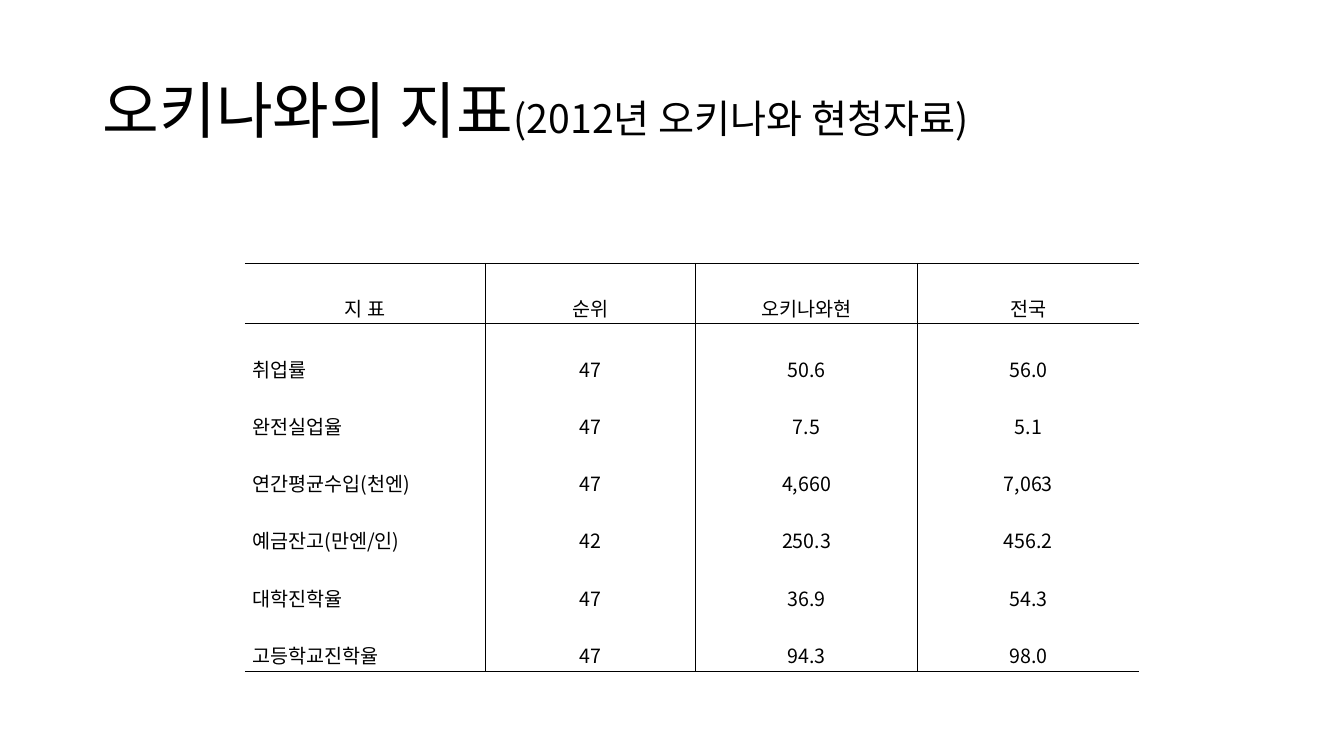
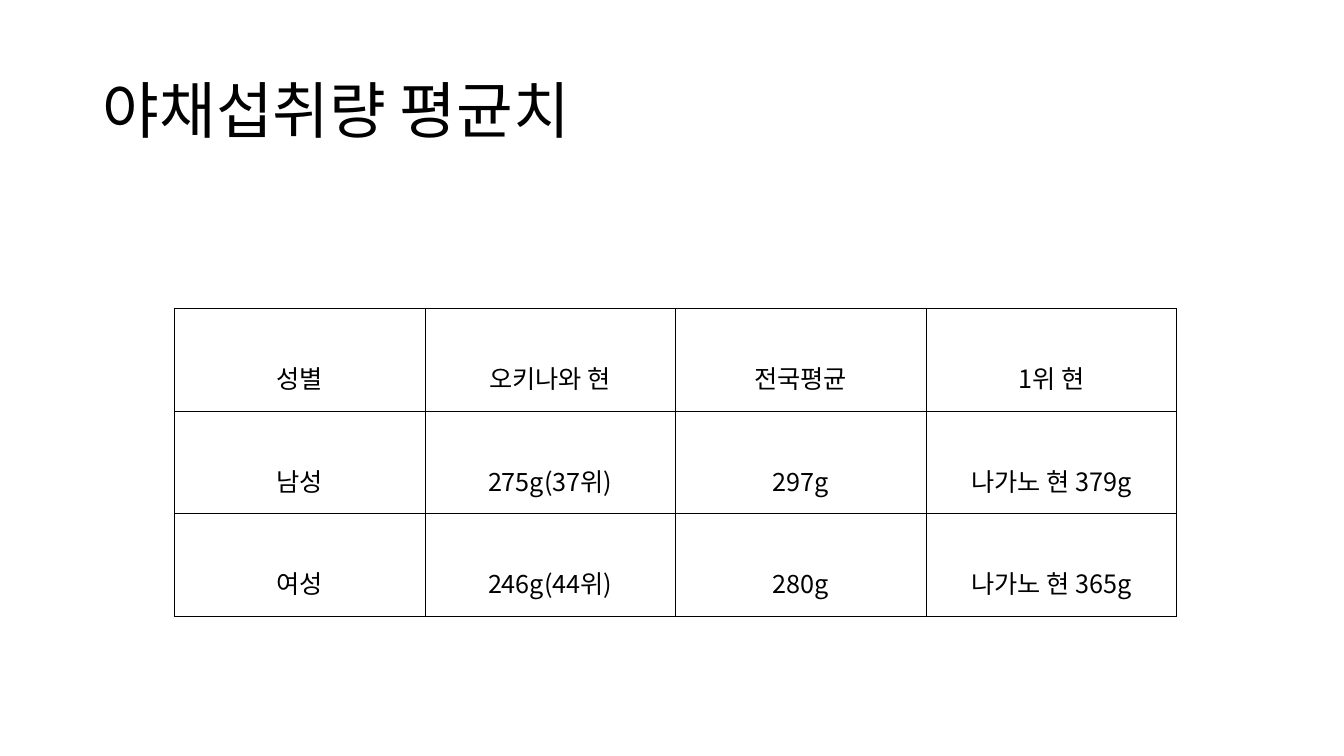
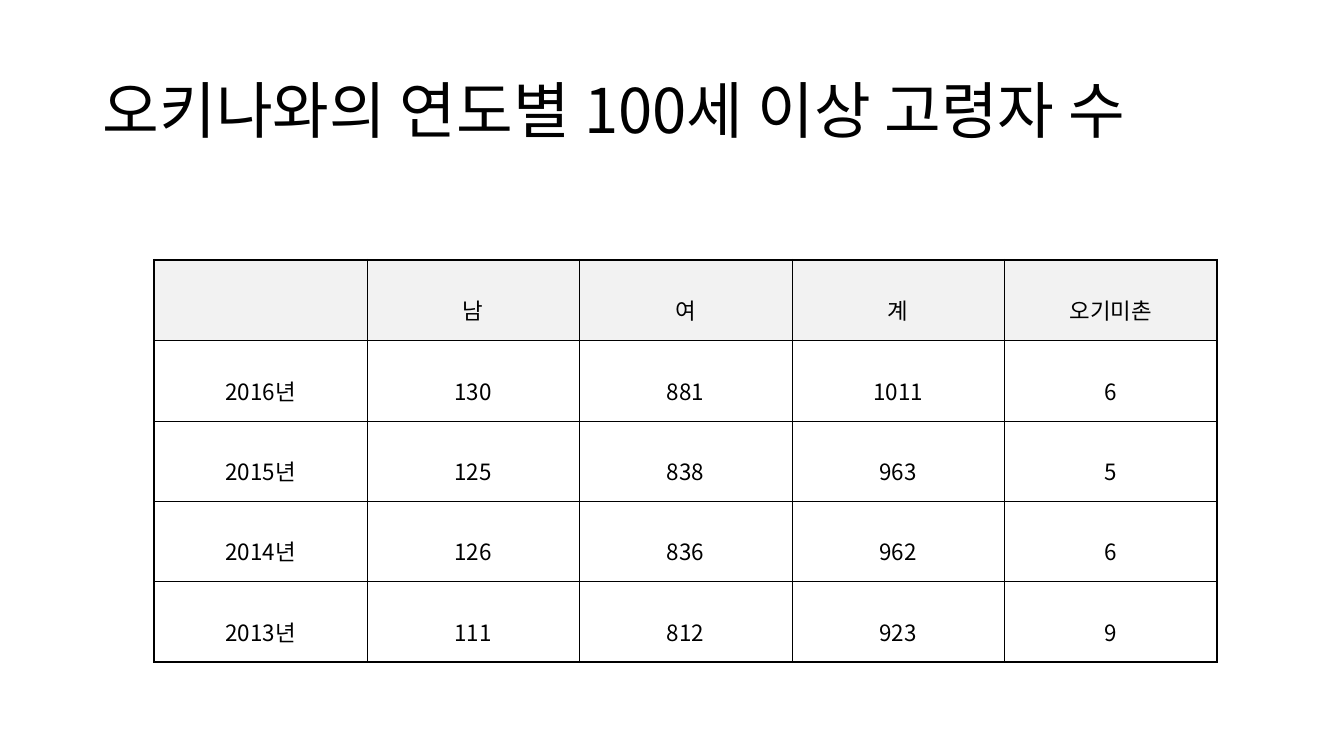
from dataclasses import dataclass
from typing import Any

import pptx
import pptx.dml.color
import pptx.enum.text
import pptx.oxml.ns
import pptx.slide
import pptx.text.text
import pptx.util
from lxml import etree

Inches = pptx.util.Inches
Pt = pptx.util.Pt
Align = pptx.enum.text.PP_ALIGN
Anchor = pptx.enum.text.MSO_ANCHOR
qn = pptx.oxml.ns.qn


@dataclass(frozen=True)
class Theme:
    font: str = "Noto Sans CJK KR"
    ink: str = "000000"
    head: str = "F2F2F2"
    title: float = 44
    note: float = 28
    small: float = 14
    mid: float = 16
    large: float = 18
    thin: float = 0.28
    thick: float = 1.98


THEME = Theme()
CELL = {
    "vertical_anchor": Anchor.MIDDLE,
    "margin_left": Inches(0.07),
    "margin_right": Inches(0.07),
    "margin_top": Inches(0.02),
    "margin_bottom": Inches(0.02),
}
FRAME = {"word_wrap": True, "vertical_anchor": Anchor.MIDDLE}
PLAIN = {"first_row": False, "horz_banding": False}


@dataclass(frozen=True)
class Grid:
    left: float
    top: float
    cols: list[float]
    rows: list[float]
    texts: list[list[str]]
    size: float
    space: float
    side: float = THEME.thin
    edge: float = THEME.thin
    fill: str = ""
    lead: Any = Align.CENTER


@dataclass(frozen=True)
class Page:
    title: str
    grid: Grid
    note: str = ""


def apply(item: Any, values: dict[str, Any]) -> None:
    for name, value in values.items():
        setattr(item, name, value)


def style(run: pptx.text.text._Run, size: float) -> None:
    apply(run.font, {"name": THEME.font, "size": Pt(size)})
    run.font.color.rgb = pptx.dml.color.RGBColor.from_string(THEME.ink)
    east = etree.SubElement(run.font._element, qn("a:ea"))
    east.set("typeface", THEME.font)


def border(cell: Any, side: str, width: float) -> None:
    props = cell._tc.get_or_add_tcPr()
    line = etree.SubElement(props, qn(f"a:ln{side}"), w=str(Pt(width)))
    if width:
        fill = etree.SubElement(line, qn("a:solidFill"))
        etree.SubElement(fill, qn("a:srgbClr"), val=THEME.ink)
    else:
        etree.SubElement(line, qn("a:noFill"))


def add_title(slide: pptx.slide.Slide, page: Page) -> None:
    box = slide.shapes.add_textbox(
        Inches(0.92), Inches(0.4), Inches(11.5), Inches(1.45)
    )
    apply(box.text_frame, FRAME)
    para = box.text_frame.paragraphs[0]
    para.line_spacing = 0.9
    for text, size in ((page.title, THEME.title), (page.note, THEME.note)):
        if text:
            run = para.add_run()
            run.text = text
            style(run, size)


def fill_cell(cell: Any, grid: Grid, row: int, col: int) -> None:
    apply(cell, CELL)
    last_row, last_col = len(grid.rows) - 1, len(grid.cols) - 1
    widths = {
        "L": grid.side if col == 0 else THEME.thin,
        "R": grid.side if col == last_col else THEME.thin,
        "T": grid.edge if row == 0 else THEME.thin,
        "B": grid.edge if row == last_row else THEME.thin,
    }
    for side, width in widths.items():
        border(cell, side, width)
    if grid.fill and row == 0:
        cell.fill.solid()
        cell.fill.fore_color.rgb = pptx.dml.color.RGBColor.from_string(grid.fill)
    else:
        cell.fill.background()
    cell.text_frame.text = grid.texts[row][col]
    align = grid.lead if row and col == 0 else Align.CENTER
    for para in cell.text_frame.paragraphs:
        apply(para, {"alignment": align, "line_spacing": grid.space})
        for run in para.runs:
            style(run, grid.size)


def add_grid(slide: pptx.slide.Slide, grid: Grid) -> None:
    table = slide.shapes.add_table(
        len(grid.rows), len(grid.cols),
        Inches(grid.left), Inches(grid.top),
        Inches(sum(grid.cols)), Inches(sum(grid.rows)),
    ).table
    apply(table, PLAIN)
    for col, width in zip(table.columns, grid.cols):
        col.width = Inches(width)
    for row, height in zip(table.rows, grid.rows):
        row.height = Inches(height)
    for row in range(len(grid.rows)):
        for col in range(len(grid.cols)):
            fill_cell(table.cell(row, col), grid, row, col)


PAGES = [
    Page(
        "오키나와의 지표",
        Grid(
            2.43, 2.61, [2.38, 2.09, 2.2, 2.2], [0.6, 3.45],
            [
                ["지 표", "순위", "오키나와현", "전국"],
                [
                    "취업률\n완전실업율\n연간평균수입(천엔)\n"
                    "예금잔고(만엔/인)\n대학진학율\n고등학교진학율",
                    "47\n47\n47\n42\n47\n47",
                    "50.6\n7.5\n4,660\n250.3\n36.9\n94.3",
                    "56.0\n5.1\n7,063\n456.2\n54.3\n98.0",
                ],
            ],
            size=THEME.small, space=2.0, side=0, lead=Align.JUSTIFY,
        ),
        "(2012년 오키나와 현청자료)",
    ),
    Page(
        "야채섭취량 평균치",
        Grid(
            1.73, 3.06, [9.94 / 4] * 4, [3.05 / 3] * 3,
            [
                ["성별", "오키나와 현", "전국평균", "1위 현"],
                ["남성", "275g(37위)", "297g", "나가노 현 379g"],
                ["여성", "246g(44위)", "280g", "나가노 현 365g"],
            ],
            size=THEME.large, space=2.0,
        ),
    ),
    Page(
        "오키나와의 연도별 100세 이상 고령자 수",
        Grid(
            1.53, 2.58, [10.54 / 5] * 5, [3.99 / 5] * 5,
            [
                ["", "남", "여", "계", "오기미촌"],
                ["2016년", "130", "881", "1011", "6"],
                ["2015년", "125", "838", "963", "5"],
                ["2014년", "126", "836", "962", "6"],
                ["2013년", "111", "812", "923", "9"],
            ],
            size=THEME.mid, space=1.6,
            side=THEME.thick, edge=THEME.thick, fill=THEME.head,
        ),
    ),
]


def main() -> None:
    deck = pptx.Presentation()
    apply(deck, {"slide_width": Inches(13.33), "slide_height": Inches(7.5)})
    for page in PAGES:
        slide = deck.slides.add_slide(deck.slide_layouts[6])
        add_title(slide, page)
        add_grid(slide, page.grid)
    deck.save("out.pptx")


if __name__ == "__main__":
    main()
